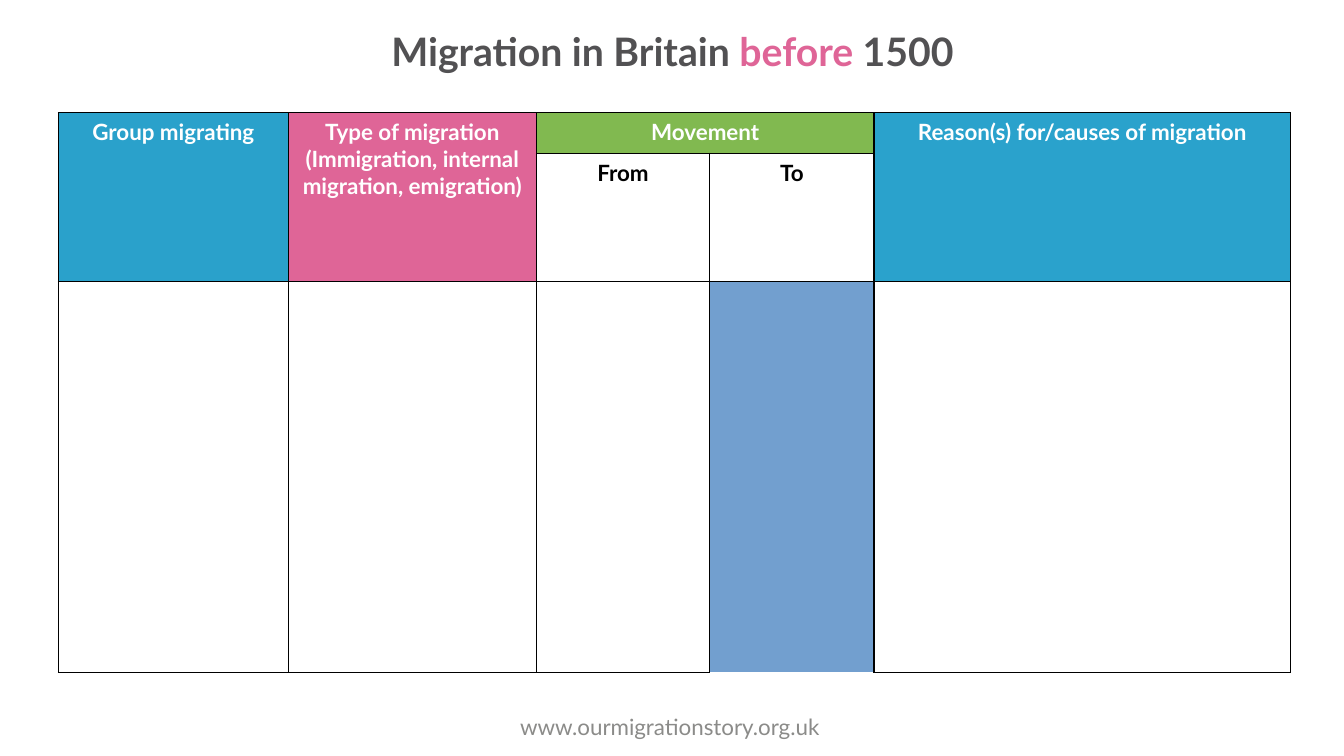
from lxml import etree
from pptx import Presentation
from pptx.dml.color import RGBColor
from pptx.enum.text import MSO_ANCHOR, PP_ALIGN
from pptx.oxml.ns import qn
from pptx.util import Inches, Pt

CENTER = PP_ALIGN.CENTER
BOTTOM = MSO_ANCHOR.BOTTOM

# Content
FONT = "Lato"
TITLE = [("Migration in Britain ", "525153"), ("before", "DF6597"), (" 1500", "525153")]
WEBSITE = "www.ourmigrationstory.org.uk"
COLUMNS = [2.28, 2.46, 1.55, 0.17, 1.63, 4.13]
ROWS = [0.4, 1.27, 3.88]
# row, column, rows spanned, columns spanned, text, fill, text colour
HEADINGS = [
    (0, 0, 2, 1, "Group migrating", "2AA1CB", "FFFFFF"),
    (0, 1, 2, 1, "Type of migration (Immigration, internal migration, emigration)",
     "DF6597", "FFFFFF"),
    (0, 2, 1, 3, "Movement", "81B950", "FFFFFF"),
    (0, 5, 2, 1, "Reason(s) for/causes of migration", "2AA2CC", "FFFFFF"),
    (1, 2, 1, 2, "From", None, "000000"),
    (1, 4, 1, 1, "To", None, "000000"),
]
# column, columns spanned, fill
ANSWERS = [(0, 1, "FFFFFF"), (1, 1, "FFFFFF"), (2, 2, "FFFFFF"),
           (4, 1, "729FCF"), (5, 1, "FFFFFF")]
SHADED_COLUMN = 4


def color(value):
    return RGBColor.from_string(value)


def style(font, size, value, bold=False):
    font.name, font.size, font.bold = FONT, Pt(size), bold
    font.color.rgb = color(value)


def set_margins(target):
    target.margin_left = target.margin_right = Inches(0.12)
    target.margin_top = target.margin_bottom = Inches(0.06)


def add_borders(cell, sides):
    properties = cell._tc.get_or_add_tcPr()
    for index, side in enumerate(sides):
        line = etree.Element(qn(f"a:ln{side}"), w=str(Pt(1)))
        fill = etree.SubElement(line, qn("a:solidFill"))
        etree.SubElement(fill, qn("a:srgbClr"), val="000000")
        properties.insert(index, line)


def fill_cell(cell, value):
    if value:
        cell.fill.solid()
        cell.fill.fore_color.rgb = color(value)
    else:
        cell.fill.background()


deck = Presentation()
deck.slide_width, deck.slide_height = Inches(13.33), Inches(7.5)
page = deck.slides.add_slide(deck.slide_layouts[6])

# Website
box = page.shapes.add_textbox(Inches(5.06), Inches(7.03), Inches(3.23), Inches(0.37))
box.text_frame.word_wrap = False
para = box.text_frame.paragraphs[0]
para.text = WEBSITE
style(para.font, 16, "8B8B89")

# Title
box = page.shapes.add_textbox(Inches(0.02), Inches(0.09), Inches(13.3), Inches(0.71))
frame = box.text_frame
frame.word_wrap = True
frame.vertical_anchor = BOTTOM
set_margins(frame)
para = frame.paragraphs[0]
para.alignment, para.line_spacing = CENTER, 0.9
for text, value in TITLE:
    span = para.add_run()
    span.text = text
    style(span.font, 28, value, True)

# Table grid
table = page.shapes.add_table(
    len(ROWS), len(COLUMNS), Inches(0.58), Inches(1.12),
    Inches(sum(COLUMNS)), Inches(sum(ROWS))).table
table.first_row = table.horz_banding = False
for column, width in zip(table.columns, COLUMNS):
    column.width = Inches(width)
for row, height in zip(table.rows, ROWS):
    row.height = Inches(height)
for row in range(len(ROWS)):
    for column in range(len(COLUMNS)):
        shaded = row == len(ROWS) - 1 and column == SHADED_COLUMN
        add_borders(table.cell(row, column), "LRT" if shaded else "LRTB")

# Heading cells
for row, column, down, across, text, fill, ink in HEADINGS:
    cell = table.cell(row, column)
    if down * across > 1:
        cell.merge(table.cell(row + down - 1, column + across - 1))
    fill_cell(cell, fill)
    set_margins(cell)
    para = cell.text_frame.paragraphs[0]
    para.text = text
    para.alignment = CENTER
    style(para.font, 16, ink, True)

# Answer cells
for column, across, fill in ANSWERS:
    cell = table.cell(2, column)
    if across > 1:
        cell.merge(table.cell(2, column + across - 1))
    fill_cell(cell, fill)

deck.save("out.pptx")
